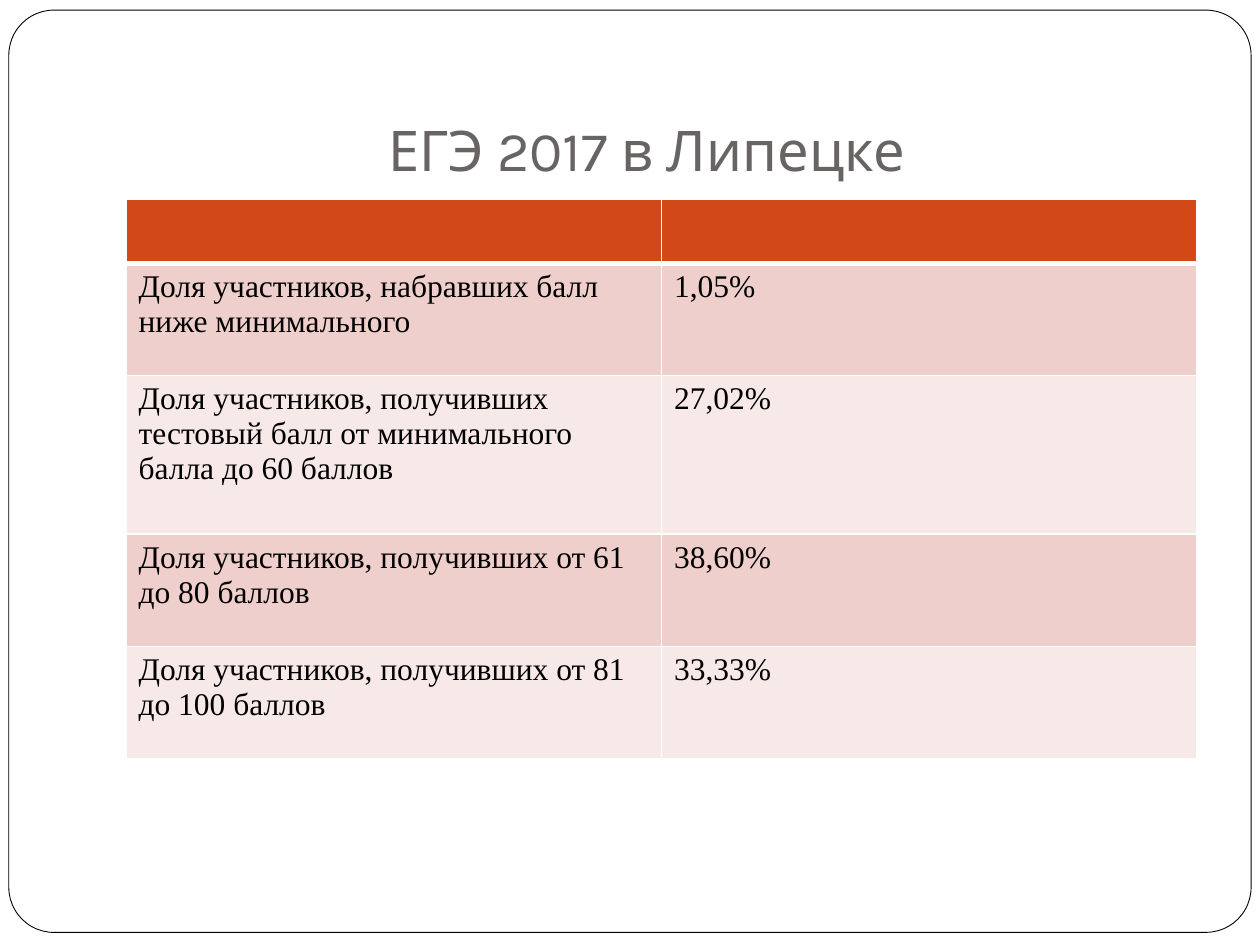
from pptx import Presentation
from pptx.util import Inches, Pt
from pptx.dml.color import RGBColor
from pptx.enum.shapes import MSO_SHAPE
from pptx.enum.text import MSO_ANCHOR
from pptx.oxml.ns import qn
from lxml.etree import SubElement

# Content
TITLE = "ЕГЭ 2017 в Липецке"
ROWS = [
    ("", ""),
    ("Доля участников, набравших балл ниже минимального", "1,05%"),
    ("Доля участников, получивших тестовый балл от минимального "
     "балла до 60 баллов", "27,02%"),
    ("Доля участников, получивших от 61 до 80 баллов", "38,60%"),
    ("Доля участников, получивших от 81 до 100 баллов", "33,33%"),
]
HEIGHTS = [0.51, 0.89, 1.26, 0.89, 0.89]
WIDTH = 8.5
HEAD, BANDS = "D34817", ("EFCFCC", "F7E9E8")


def color(code):
    return RGBColor.from_string(code)


def write(frame, text, font="Times New Roman", size=18, ink="000000"):
    frame.word_wrap = True
    run = frame.paragraphs[0].add_run()
    run.text = text
    run.font.name = font
    run.font.size = Pt(size)
    run.font.color.rgb = color(ink)


def border(cell, side, width, ink="FFFFFF"):
    props = cell._tc.get_or_add_tcPr()
    line = SubElement(props, qn("a:ln" + side), w=str(Pt(width)))
    fill = SubElement(line, qn("a:solidFill"))
    SubElement(fill, qn("a:srgbClr"), val=ink)


deck = Presentation()
deck.slide_width, deck.slide_height = Inches(10), Inches(7.5)
slide = deck.slides.add_slide(deck.slide_layouts[6])
shapes = slide.shapes

# Rounded frame
frame = shapes.add_shape(MSO_SHAPE.ROUNDED_RECTANGLE, Inches(0.07),
                         Inches(0.08), Inches(9.86), Inches(7.32))
frame.adjustments[0] = 0.049
frame.shadow.inherit = False
frame.fill.solid()
frame.fill.fore_color.rgb = color("FFFFFF")
frame.line.color.rgb = color("000000")
frame.line.width = Pt(0.5)

# Title, set in from the left edge of its box
title = shapes.add_textbox(Inches(1), Inches(0.3),
                           Inches(WIDTH), Inches(1.25)).text_frame
title.vertical_anchor = MSO_ANCHOR.BOTTOM
title.margin_left = Inches(2.08)
title.margin_bottom = Inches(0.1)
write(title, TITLE, font="Karla", size=32, ink="696464")

# Table with a header and two alternating bands
table = shapes.add_table(len(ROWS), 2, Inches(1), Inches(1.58),
                         Inches(WIDTH), Inches(sum(HEIGHTS))).table
for col in table.columns:
    col.width = Inches(WIDTH / 2)
for r, (texts, height) in enumerate(zip(ROWS, HEIGHTS)):
    table.rows[r].height = Inches(height)
    for c, text in enumerate(texts):
        cell = table.cell(r, c)
        # The rule below the header is the thick one
        for side in "LRTB":
            thick = (r, side) in ((0, "B"), (1, "T"))
            border(cell, side, 3 if thick else 1)
        cell.fill.solid()
        cell.fill.fore_color.rgb = color(BANDS[(r - 1) % 2] if r else HEAD)
        if text:
            write(cell.text_frame, text)

deck.save("out.pptx")
